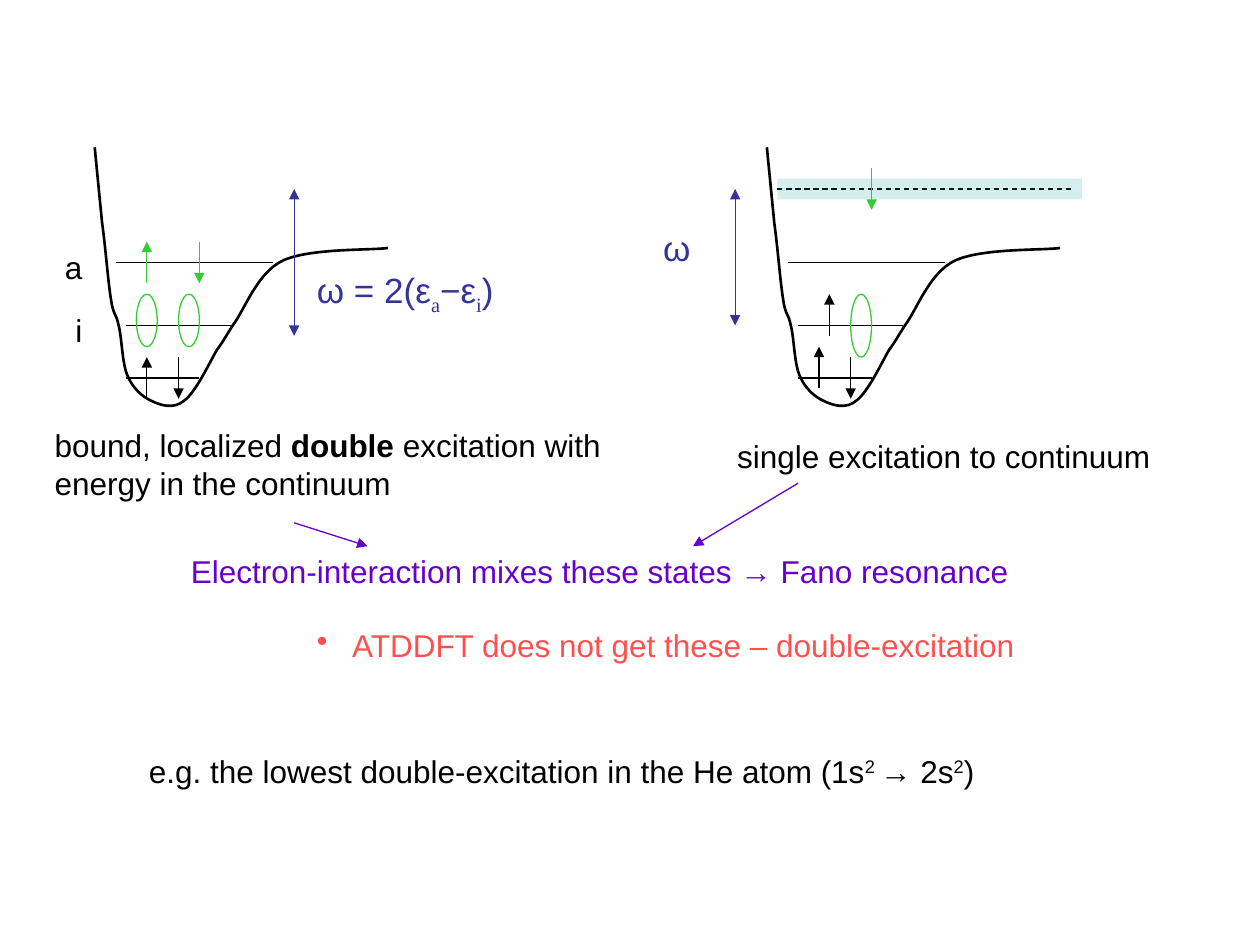
"""Build a slide on double excitations and Fano resonance in two potential wells."""
from lxml.etree import SubElement
from pptx import Presentation
from pptx.dml.color import RGBColor
from pptx.enum.dml import MSO_LINE_DASH_STYLE as DASH
from pptx.enum.shapes import MSO_CONNECTOR as CONN, MSO_SHAPE as SHAPE
from pptx.oxml.ns import qn
from pptx.util import Cm, Pt

BLACK = RGBColor(0x00, 0x00, 0x00)
GREEN = RGBColor(0x33, 0xCC, 0x33)
BLUE = RGBColor(0x33, 0x33, 0x99)
PURPLE = RGBColor(0x66, 0x00, 0xCC)
CORAL = RGBColor(0xFF, 0x50, 0x50)
TEAL = RGBColor(0x00, 0x99, 0x99)
SHIFT = 13.55
CURVE = [
    (1.91, 2.97), (1.96, 3.48), (2.01, 3.99), (2.06, 4.5),
    (2.13, 5), (2.18, 5.69), (2.24, 6.05),
    (2.29, 6.38), (2.34, 6.3), (2.39, 6.55),
    (2.46, 6.81), (2.46, 7.32), (2.57, 7.57),
    (2.67, 7.82), (2.87, 8), (3.05, 8.08),
    (3.25, 8.18), (3.51, 8.25), (3.71, 8.08),
    (3.94, 7.92), (4.22, 7.32), (4.37, 7.06),
    (4.55, 6.81), (4.5, 6.86), (4.7, 6.55),
    (4.93, 6.25), (5.18, 5.51), (5.69, 5.26),
    (6.22, 5), (7.47, 5.05), (7.82, 5),
]

prs = Presentation()
prs.slide_width, prs.slide_height = Cm(25.4), Cm(19.05)
s = prs.slides.add_slide(prs.slide_layouts[6])


def add_line(x1, y1, x2, y2, color, ends=()):
    c = s.shapes.add_connector(CONN.STRAIGHT, Cm(x1), Cm(y1), Cm(x2), Cm(y2))
    c.line.color.rgb = color
    c.line.width = Pt(0.75)
    for end in ends:
        SubElement(c.line._get_or_add_ln(), qn(f"a:{end}"), type="triangle")
    SubElement(c._element.spPr, qn("a:effectLst"))
    return c


def add_text(x, y, w, h, color, size, *runs):
    tf = s.shapes.add_textbox(Cm(x), Cm(y), Cm(w), Cm(h)).text_frame
    tf.word_wrap = True
    p = tf.paragraphs[0]
    for text, style in runs:
        r = p.add_run()
        r.text = text
        r.font.size = Pt(size)
        r.font.color.rgb = color
        r.font.name = "Times New Roman" if style == "sub" else "Arial"
        r.font.bold = style == "bold"
        if style in ("sub", "super"):
            r._r.get_or_add_rPr().set("baseline", "-25000" if style == "sub" else "30000")
    return p


continuum = add_line(15.67, 3.81, 21.59, 3.81, BLACK)
continuum.line.dash_style = DASH.DASH

for dx in (0, SHIFT):
    points = [(Cm(x + dx), Cm(y)) for x, y in CURVE]
    fb = s.shapes.build_freeform(*points[0])
    fb.add_line_segments(points[1:], close=False)
    well = fb.convert_to_shape()
    well.shadow.inherit = False
    well.fill.background()
    well.line.color.rgb = BLACK
    well.line.width = Pt(1.5)
    path = well._element.find(".//" + qn("a:path"))
    segments = path.findall(qn("a:lnTo"))
    for i in range(0, len(segments), 3):
        bezier = SubElement(path, qn("a:cubicBezTo"))
        for segment in segments[i:i + 3]:
            bezier.append(segment[0])
            path.remove(segment)
    for x1, x2, y in ((2.34, 5.51, 5.29), (2.54, 4.66, 6.56), (2.54, 4.02, 7.62)):
        add_line(x1 + dx, y, x2 + dx, y, BLACK)

for x, y1, y2, color in (
    (2.96, 8.04, 7.2, BLACK), (3.6, 7.2, 8.04, BLACK),
    (2.96, 5.71, 4.87, GREEN), (4.02, 4.87, 5.71, GREEN),
    (16.51, 7.83, 6.99, BLACK), (16.72, 6.77, 5.93, BLACK),
    (17.15, 7.2, 8.04, BLACK), (17.57, 3.39, 4.23, GREEN),
):
    add_line(x, y1, x, y2, color, ["tailEnd"])

for x, h in ((2.75, 1.06), (3.6, 1.06), (17.15, 1.27)):
    sp = s.shapes.add_shape(SHAPE.OVAL, Cm(x), Cm(5.93), Cm(0.42), Cm(h))
    sp.shadow.inherit = False
    sp.fill.background()
    sp.line.color.rgb = GREEN
    sp.line.width = Pt(0.75)

band = s.shapes.add_shape(SHAPE.RECTANGLE, Cm(15.67), Cm(3.6), Cm(6.14), Cm(0.42))
band.shadow.inherit = False
band.fill.solid()
band.fill.fore_color.rgb = TEAL
SubElement(band._element.spPr.find(".//" + qn("a:srgbClr")), qn("a:alpha"), val="17000")
band.line.fill.background()
continuum.begin_connect(band, 1)

for x, y2 in ((5.93, 6.77), (14.82, 6.56)):
    add_line(x, 3.81, x, y2, BLUE, ["headEnd", "tailEnd"])
add_line(5.93, 10.54, 7.41, 11.01, PURPLE, ["tailEnd"])
add_line(16.09, 9.74, 13.97, 11.01, PURPLE, ["tailEnd"])

add_text(1.06, 4.87, 1.06, 1.02, BLACK, 18, ("a", ""))
add_text(1.27, 6.14, 0.85, 1.02, BLACK, 18, ("i", ""))
add_text(13.12, 4.45, 1.27, 1.1, BLUE, 20, ("ω", ""))
add_text(6.14, 5.29, 4.45, 1.1, BLUE, 20,
         ("ω = 2(ε", ""), ("a", "sub"), ("−ε", ""), ("i", "sub"), (")", ""))
add_text(0.85, 8.47, 11.85, 1.78, BLACK, 18, ("bound, localized", ""),
         (" double ", "bold"), ("excitation with energy in the continuum", ""))
add_text(14.61, 8.68, 9.53, 1.02, BLACK, 18, ("single excitation to continuum", ""))
add_text(3.6, 11.01, 18.2, 1.02, PURPLE, 18,
         ("Electron-interaction mixes these states → Fano resonance", ""))
p = add_text(6.14, 12.49, 17.2, 1.02, CORAL, 18,
             (" ATDDFT does not get these – double-excitation", ""))
pPr = p._p.get_or_add_pPr()
pPr.set("marL", str(Cm(0.57)))
pPr.set("indent", str(-Cm(0.57)))
SubElement(pPr, qn("a:buChar"), char="•")
add_text(2.75, 15.03, 17.78, 1.02, BLACK, 18,
         ("e.g. the lowest double-excitation in the He atom (1s", ""),
         ("2 ", "super"), ("→ 2s", ""), ("2", "super"), (")", ""))

prs.save("out.pptx")
